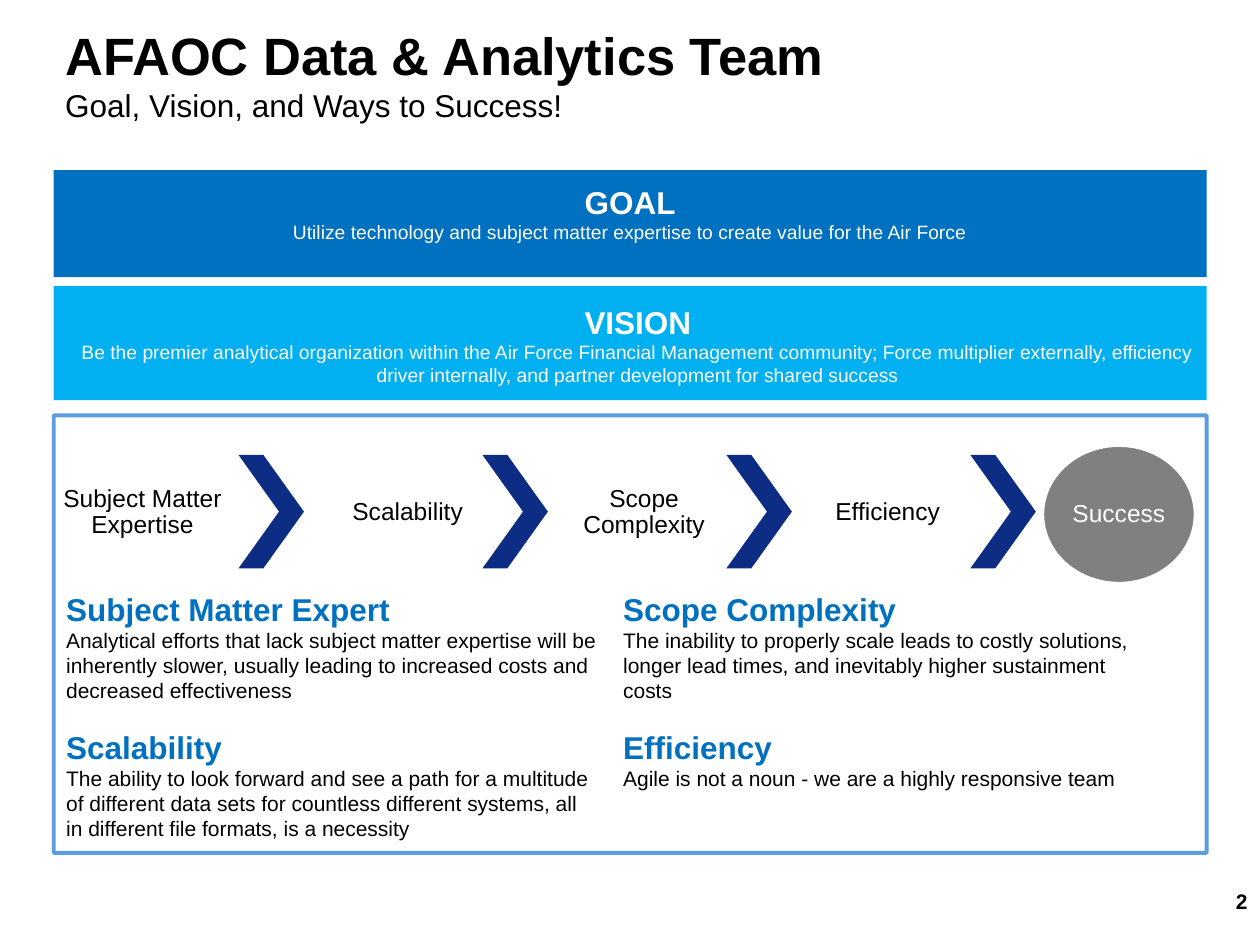
from dataclasses import dataclass
from typing import NamedTuple

from pptx import Presentation
from pptx.dml.color import RGBColor
from pptx.enum import shapes, text
from pptx.oxml import parse_xml
from pptx.oxml.ns import nsdecls
from pptx.util import Pt

COLORS = {
    "black": "000000",
    "white": "FFFFFF",
    "goal": "0070C0",
    "vision": "00B0F0",
    "chevron": "0C2D83",
    "success": "808080",
    "frame": "0066CC",
}
SHAPE = shapes.MSO_SHAPE
ALIGN = text.PP_ALIGN
ANCHOR = text.MSO_ANCHOR


class Box(NamedTuple):
    left: float
    top: float
    width: float
    height: float


class Line(NamedTuple):
    text: str
    size: float
    color: str = "black"
    bold: bool = False
    before: float = 0
    after_break: bool = False


@dataclass
class Banner:
    bar: Box
    text_box: Box
    color: str
    heading: str
    body: str


@dataclass
class Column:
    box: Box
    topics: list[tuple[str, str]]


@dataclass
class Step:
    label: str
    left: float


def rgb(name: str) -> RGBColor:
    return RGBColor.from_string(COLORS[name])


def write(sp, lines: list[Line], align=ALIGN.LEFT, anchor=ANCHOR.TOP,
          spacing: float = 1.0, inset: tuple[float, float] = (7.2, 3.6)) -> None:
    tf = sp.text_frame
    x, y = (Pt(v) for v in inset)
    frame = {"word_wrap": True, "vertical_anchor": anchor, "margin_left": x,
             "margin_right": x, "margin_top": y, "margin_bottom": y}
    for key, value in frame.items():
        setattr(tf, key, value)
    p = tf.paragraphs[0]
    for i, line in enumerate(lines):
        if line.after_break:
            p.add_line_break()
        else:
            p = tf.add_paragraph() if i else p
            layout = {"alignment": align, "line_spacing": spacing,
                      "space_before": Pt(line.before), "space_after": Pt(0)}
            for key, value in layout.items():
                setattr(p, key, value)
        r = p.add_run()
        r.text = line.text
        for key, value in {"name": "Arial", "size": Pt(line.size), "bold": line.bold}.items():
            setattr(r.font, key, value)
        r.font.color.rgb = rgb(line.color)


def add_text(s, box: Box, lines: list[Line], **layout) -> None:
    write(s.shapes.add_textbox(*map(Pt, box)), lines, **layout)


def add_solid(s, kind, box: Box, fill: str | None = None,
              line: str | None = None, weight: float = 1):
    sp = s.shapes.add_shape(kind, *map(Pt, box))
    sp.shadow.inherit = False
    if fill:
        sp.fill.solid()
        sp.fill.fore_color.rgb = rgb(fill)
    else:
        sp.fill.background()
    if line:
        sp.line.color.rgb = rgb(line)
        sp.line.width = Pt(weight)
    else:
        sp.line.fill.background()
    return sp


def add_banner(s, banner: Banner) -> None:
    add_solid(s, SHAPE.RECTANGLE, banner.bar, banner.color)
    lines = [Line(banner.heading, 18, "white", True), Line(banner.body, 11, "white")]
    add_text(s, banner.text_box, lines, align=ALIGN.CENTER)


def add_column(s, column: Column) -> None:
    lines = []
    for i, (heading, body) in enumerate(column.topics):
        lines += [Line(heading, 18, "goal", True, 14 if i else 0), Line(body, 12)]
    add_text(s, column.box, lines)


def add_step(s, step: Step, index: int) -> None:
    add_text(s, Box(step.left, 278, 101.5, 30), [Line(step.label, 14)],
             align=ALIGN.CENTER, anchor=ANCHOR.MIDDLE, spacing=0.9, inset=(1.4, 1.4))
    chevron = add_solid(s, SHAPE.CHEVRON, Box(136.3 + 139.4 * index, 260, 37.4, 64.8), "chevron")
    chevron.adjustments[0] = 0.62


BANNERS = [
    Banner(Box(30.7, 97.2, 658.8, 61.2), Box(30.7, 100.8, 658.8, 73.4), "goal", "GOAL",
           "Utilize technology and subject matter expertise to create value for the Air Force"),
    Banner(Box(30.7, 163.5, 658.8, 65.2), Box(35.1, 169.4, 658.8, 73.4), "vision", "VISION",
           "Be the premier analytical organization within the Air Force Financial Management "
           "community; Force multiplier externally, efficiency driver internally, and partner "
           "development for shared success"),
]
STEPS = [
    Step("Subject Matter Expertise", 30.7),
    Step("Scalability", 182.2),
    Step("Scope Complexity", 317.3),
    Step("Efficiency", 456.5),
]
COLUMNS = [
    Column(Box(30.7, 333.4, 318.3, 172), [
        ("Subject Matter Expert",
         "Analytical efforts that lack subject matter expertise will be inherently slower, "
         "usually leading to increased costs and decreased effectiveness"),
        ("Scalability",
         "The ability to look forward and see a path for a multitude of different data sets for "
         "countless different systems, all in different file formats, is a necessity"),
    ]),
    Column(Box(349, 333.4, 318.3, 155.5), [
        ("Scope Complexity",
         "The inability to properly scale leads to costly solutions, longer lead times, and "
         "inevitably higher sustainment costs"),
        ("Efficiency", "Agile is not a noun - we are a highly responsive team"),
    ]),
]


def main() -> None:
    prs = Presentation()
    prs.slide_width, prs.slide_height = Pt(720), Pt(540)
    s = prs.slides.add_slide(prs.slide_layouts[6])

    add_text(s, Box(30.2, 0, 676.8, 84.2),
             [Line("AFAOC Data & Analytics Team", 30, bold=True),
              Line("Goal, Vision, and Ways to Success!", 18, after_break=True)],
             anchor=ANCHOR.MIDDLE)
    for banner in BANNERS:
        add_banner(s, banner)
    for index, step in enumerate(STEPS):
        add_step(s, step, index)
    success = add_solid(s, SHAPE.OVAL, Box(596.2, 254.9, 86.4, 78.1), "success", "white")
    write(success, [Line("Success", 14, "white")], align=ALIGN.CENTER,
          anchor=ANCHOR.MIDDLE, spacing=0.9, inset=(0, 0))
    for column in COLUMNS:
        add_column(s, column)

    frame = add_solid(s, SHAPE.RECTANGLE, Box(30.7, 237.4, 658.8, 250), line="frame", weight=2.25)
    color = frame.line._get_or_add_ln().find(".//{*}srgbClr")
    color.append(parse_xml(f'<a:alpha {nsdecls("a")} val="63000"/>'))

    add_text(s, Box(685.4, 500.4, 34.6, 28.8), [Line("2", 12, bold=True)],
             align=ALIGN.RIGHT, anchor=ANCHOR.MIDDLE)
    prs.save("out.pptx")


if __name__ == "__main__":
    main()
